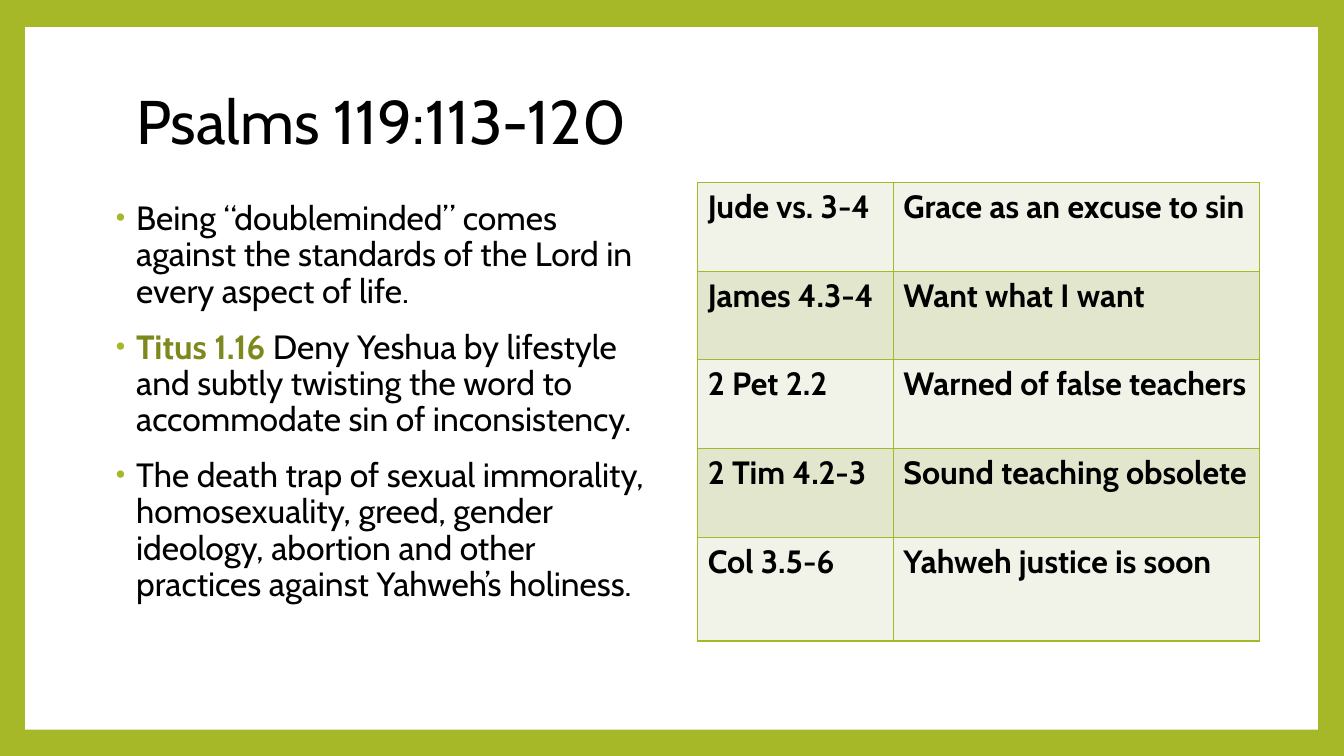
from dataclasses import dataclass

from lxml import etree
from pptx import Presentation
from pptx import util as u
from pptx.dml.color import RGBColor
from pptx.enum import shapes, text
from pptx.oxml.ns import qn

PX = 9144  # EMU in one px, 100 px to the inch


@dataclass(frozen=True)
class Theme:
    font: str = "Cabin"
    green: str = "A6B727"
    dark_green: str = "7D891D"
    ink: str = "000000"
    white: str = "FFFFFF"
    bands: tuple = ("F1F3E8", "E1E6CD")
    title_size: int = 44
    body_size: int = 24
    table_size: int = 23


BULLETS = [
    [("Being “doubleminded” comes against the standards of the Lord in every aspect of life.", False)],
    [("Titus 1.16 ", True),
     ("Deny Yeshua by lifestyle and subtly twisting the word to accommodate sin of inconsistency.", False)],
    [("The death trap of sexual immorality, homosexuality, greed, gender ideology, "
      "abortion and other practices against Yahweh’s holiness.", False)],
]
VERSES = [
    ("Jude vs. 3-4", "Grace as an excuse to sin"),
    ("James 4.3-4", "Want what I want"),
    ("2 Pet 2.2", "Warned of false teachers"),
    ("2 Tim 4.2-3", "Sound teaching obsolete"),
    ("Col 3.5-6", "Yahweh justice is soon"),
]


def px(*lengths):
    return [u.Emu(length * PX) for length in lengths]


def set_values(target, values):
    for name, value in values.items():
        setattr(target, name, value)


def paint(fill, color):
    fill.solid()
    fill.fore_color.rgb = RGBColor.from_string(color)


class SlideBuilder:
    def __init__(self, page, theme):
        self.page = page
        self.theme = theme

    def span(self, para, words, size, color=None, bold=False):
        span = para.add_run()
        span.text = words
        set_values(span.font, {"name": self.theme.font, "size": u.Pt(size), "bold": bold})
        span.font.color.rgb = RGBColor.from_string(color or self.theme.ink)

    def place(self, box, area, anchor):
        set_values(box, dict(zip(("left", "top", "width", "height"), px(*area))))
        set_values(box.text_frame, {"word_wrap": True, "vertical_anchor": anchor,
                                    "auto_size": text.MSO_AUTO_SIZE.NONE})

    def frame(self, area):
        """Cover the green background with a white panel, leaving a border."""
        paint(self.page.background.fill, self.theme.green)
        panel = self.page.shapes.add_shape(shapes.MSO_SHAPE.RECTANGLE, *px(*area))
        panel.shadow.inherit = False
        paint(panel.fill, self.theme.white)
        panel.line.fill.background()
        panel.element.getparent().insert(2, panel.element)

    def title(self, words, area):
        box = self.page.shapes.title
        self.place(box, area, text.MSO_ANCHOR.MIDDLE)
        para = box.text_frame.paragraphs[0]
        set_values(para, {"alignment": text.PP_ALIGN.LEFT, "line_spacing": 0.9})
        self.span(para, words, self.theme.title_size)

    def bullet(self, para):
        properties = para._p.get_or_add_pPr()
        for name, value in zip(("marL", "indent"), px(25, -20)):
            properties.set(name, str(value))
        color = etree.SubElement(properties, qn("a:buClr"))
        etree.SubElement(color, qn("a:srgbClr"), val=self.theme.green)
        etree.SubElement(properties, qn("a:buSzPct"), val="80000")
        etree.SubElement(properties, qn("a:buFont"), typeface="Arial")
        etree.SubElement(properties, qn("a:buChar"), char="•")

    def bullets(self, items, area):
        box = self.page.placeholders[1]
        self.place(box, area, text.MSO_ANCHOR.TOP)
        for index, item in enumerate(items):
            para = box.text_frame.add_paragraph() if index else box.text_frame.paragraphs[0]
            self.bullet(para)
            set_values(para, {"line_spacing": 0.9, "space_before": u.Pt(14 if index else 0),
                              "space_after": u.Pt(0)})
            for words, marked in item:
                color = self.theme.dark_green if marked else self.theme.ink
                self.span(para, words, self.theme.body_size, color, marked)

    def borders(self, cell):
        properties = cell._tc.get_or_add_tcPr()
        for index, side in enumerate(("lnL", "lnR", "lnT", "lnB")):
            line = etree.Element(qn(f"a:{side}"), w=str(u.Pt(1)))
            fill = etree.SubElement(line, qn("a:solidFill"))
            etree.SubElement(fill, qn("a:srgbClr"), val=self.theme.green)
            properties.insert(index, line)

    def table(self, rows, left, top, widths, heights):
        area = px(left, top, sum(widths), sum(heights))
        table = self.page.shapes.add_table(len(rows), len(widths), *area).table
        set_values(table, {"first_row": False, "horz_banding": False})
        for column, width in zip(table.columns, px(*widths)):
            column.width = width
        for row, height in zip(table.rows, px(*heights)):
            row.height = height
        for index, row in enumerate(rows):
            for cell, words in zip(table.rows[index].cells, row):
                paint(cell.fill, self.theme.bands[index % 2])
                self.borders(cell)
                self.span(cell.text_frame.paragraphs[0], words, self.theme.table_size, bold=True)


def main():
    deck = Presentation()
    deck.slide_width, deck.slide_height = px(1333, 750)
    page = deck.slides.add_slide(deck.slide_layouts[1])
    builder = SlideBuilder(page, Theme())
    builder.frame((25, 27, 1282, 697))
    builder.title("Psalms 119:113-120", (125, 67, 508, 114))
    builder.bullets(BULLETS, (100, 195, 556, 470))
    builder.table(VERSES, 692, 181, widths=(194, 363), heights=(88, 88, 88, 88, 103))
    deck.save("out.pptx")


if __name__ == "__main__":
    main()
